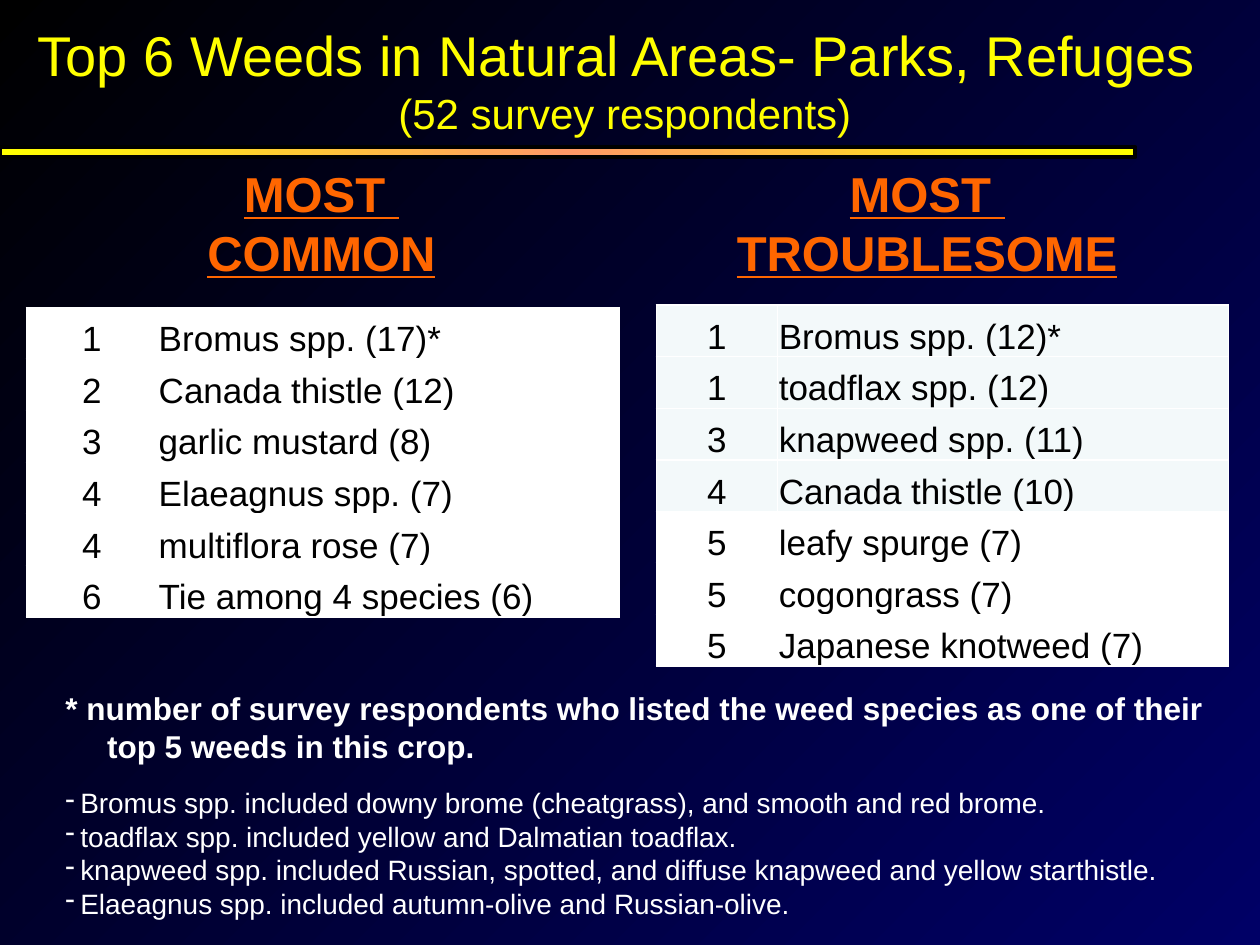
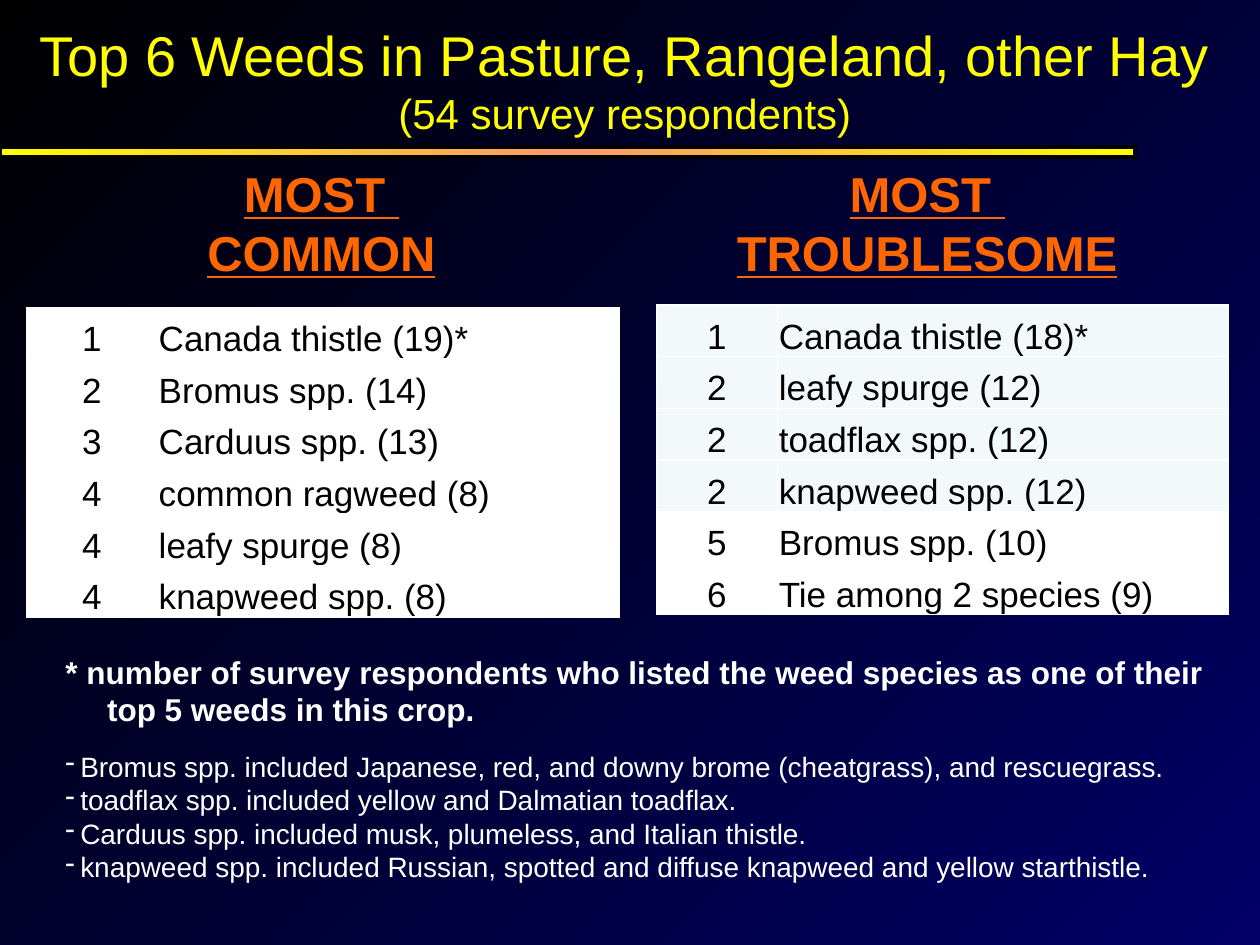
from copy import deepcopy

from lxml.etree import SubElement
from pptx import Presentation
from pptx.dml.color import RGBColor
from pptx.enum.shapes import MSO_SHAPE
from pptx.enum.text import MSO_ANCHOR, MSO_AUTO_SIZE, PP_ALIGN
from pptx.oxml.ns import qn
from pptx.util import Cm, Pt

# Content
FOOTNOTE = ("* number of survey respondents who listed the weed species "
            "as one of their top 5 weeds in this crop.")
SLIDES = [
    {
        "title": ["Top 6 Weeds in Natural Areas- Parks, Refuges ",
                  "(52 survey respondents)"],
        "common": [(1, "Bromus spp. (17)*"), (2, "Canada thistle (12)"),
                   (3, "garlic mustard (8)"), (4, "Elaeagnus spp. (7)"),
                   (4, "multiflora rose (7)"), (6, "Tie among 4 species (6)")],
        "troublesome": [(1, "Bromus spp. (12)*"), (1, "toadflax spp. (12)"),
                        (3, "knapweed spp. (11)"), (4, "Canada thistle (10)"),
                        (5, "leafy spurge (7)"), (5, "cogongrass (7)"),
                        (5, "Japanese knotweed (7)")],
        "notes": [
            "Bromus spp. included downy brome (cheatgrass), and smooth and red brome.",
            "toadflax spp. included yellow and Dalmatian toadflax.",
            "knapweed spp. included Russian, spotted, and diffuse knapweed and yellow starthistle.",
            "Elaeagnus spp. included autumn-olive and Russian-olive."],
        "notes_top": 13.77,
    },
    {
        "title": ["Top 6 Weeds in Pasture, Rangeland, other Hay ",
                  "(54 survey respondents)"],
        "common": [(1, "Canada thistle (19)*"), (2, "Bromus spp. (14)"),
                   (3, "Carduus spp. (13)"), (4, "common ragweed (8)"),
                   (4, "leafy spurge (8)"), (4, "knapweed spp. (8)")],
        "troublesome": [(1, "Canada thistle (18)*"), (2, "leafy spurge (12)"),
                        (2, "toadflax spp. (12)"), (2, "knapweed spp. (12)"),
                        (5, "Bromus spp. (10)"), (6, "Tie among 2 species (9)")],
        "notes": [
            "Bromus spp. included Japanese, red, and downy brome (cheatgrass), and rescuegrass.",
            "toadflax spp. included yellow and Dalmatian toadflax.",
            "Carduus spp. included musk, plumeless, and Italian thistle.",
            "knapweed spp. included Russian, spotted and diffuse knapweed and yellow starthistle."],
        "notes_top": 13.03,
    },
]

# Shared look; lengths in cm
FONT = "Arial"
COLORS = {"black": "000000", "navy": "000066", "yellow": "FFFF00",
          "peach": "FF9966", "orange": "FF6600", "white": "FFFFFF",
          "tint": "F3F9FA"}
ROW_H = 1.04
RANKINGS = {
    "common": {"heading": "MOST \nCOMMON", "heading_at": (3.43, 3.18, 6.1, 2.41),
               "table_at": (0.53, 6.2), "cols": (2.64, 9.32), "tinted": 0},
    "troublesome": {"heading": "MOST \nTROUBLESOME", "heading_at": (14.55, 3.18, 8.28, 2.41),
                    "table_at": (13.23, 6.15), "cols": (2.44, 9.09), "tinted": 4},
}


def rgb(name):
    return RGBColor.from_string(COLORS[name])


def cm(*lengths):
    return [Cm(n) for n in lengths]


def style(p, size, color, bold=False, underline=False, align=PP_ALIGN.LEFT):
    p.alignment = align
    for r in p.runs:
        f = r.font
        f.name, f.size, f.bold, f.underline = FONT, Pt(size), bold, underline
        f.color.rgb = rgb(color)


def set_gradient(fill, names, angle):
    """Spread the named colours evenly; the angle runs counter-clockwise."""
    fill.gradient()
    fill.gradient_angle = angle
    gs_lst = fill.gradient_stops[0]._gs.getparent()
    while len(gs_lst) < len(names):
        gs_lst.append(deepcopy(gs_lst[0]))
    for i, (stop, name) in enumerate(zip(fill.gradient_stops, names)):
        stop.position = i / (len(names) - 1)
        stop.color.rgb = rgb(name)


def set_indent(p, indent, bullet=None):
    pPr = p._p.get_or_add_pPr()
    pPr.set("marL", str(Cm(indent)))
    pPr.set("indent", str(-Cm(indent)))
    if bullet:
        SubElement(pPr, qn("a:buChar")).set("char", bullet)


def set_borders(cell, name):
    tcPr = cell._tc.get_or_add_tcPr()
    for i, side in enumerate(("lnL", "lnR", "lnT", "lnB")):
        ln = tcPr.makeelement(qn(f"a:{side}"), {"w": str(Pt(1))})
        SubElement(SubElement(ln, qn("a:solidFill")), qn("a:srgbClr")).set("val", COLORS[name])
        tcPr.insert(i, ln)


def add_title(s, lines):
    title = s.shapes.title
    title.left, title.top, title.width, title.height = cm(0.43, 0, 24.33, 3.18)
    tf = title.text_frame
    tf.text = "\n".join(lines)
    tf.auto_size = MSO_AUTO_SIZE.NONE
    tf.vertical_anchor = MSO_ANCHOR.MIDDLE
    for p, size in zip(tf.paragraphs, (32, 24)):
        style(p, size, "yellow", align=PP_ALIGN.CENTER)


def add_title_rule(s):
    rule = s.shapes.add_shape(MSO_SHAPE.RECTANGLE, *cm(0, 2.97, 22.89, 0.2))
    rule.shadow.inherit = False
    set_gradient(rule.fill, ("yellow", "peach", "yellow"), 0)
    rule.line.color.rgb = rgb("black")
    rule.line.width = Pt(2.25)


def add_heading(s, text, at):
    tf = s.shapes.add_textbox(*cm(*at)).text_frame
    tf.word_wrap = False
    tf.text = text
    for p in tf.paragraphs:
        style(p, 28, "orange", bold=True, underline=True, align=PP_ALIGN.CENTER)


def add_ranking(s, weeds, at, cols, tinted):
    size = (sum(cols), ROW_H * len(weeds))
    table = s.shapes.add_table(len(weeds), len(cols), *cm(*at, *size)).table
    table.first_row = table.horz_banding = False
    for col, width in zip(table.columns, cols):
        col.width = Cm(width)
    for i, weed in enumerate(weeds):
        table.rows[i].height = Cm(ROW_H)
        for j, value in enumerate(weed):
            cell = table.cell(i, j)
            cell.text_frame.text = str(value)
            cell.vertical_anchor = MSO_ANCHOR.BOTTOM
            cell.margin_left = cell.margin_right = cell.margin_top = Cm(0.03)
            cell.margin_bottom = 0
            cell.fill.solid()
            cell.fill.fore_color.rgb = rgb("tint" if i < tinted else "white")
            set_borders(cell, "white")
            style(cell.text_frame.paragraphs[0], 20, "black",
                  align=PP_ALIGN.LEFT if j else PP_ALIGN.CENTER)


def add_notes(s, notes, top):
    tf = s.shapes.add_textbox(*cm(1.07, top, 23.5, 4.95)).text_frame
    tf.word_wrap = True
    tf.text = "\n".join([FOOTNOTE, *notes])
    footnote, *items = tf.paragraphs
    style(footnote, 18, "white", bold=True)
    set_indent(footnote, 0.84)
    items[0].space_before = Pt(12)
    for p in items:
        style(p, 16, "white")
        set_indent(p, 0.3, bullet="-")


def main():
    prs = Presentation()
    prs.slide_width, prs.slide_height = cm(25.4, 19.05)
    set_gradient(prs.slide_master.background.fill, ("black", "navy"), 315)
    for data in SLIDES:
        s = prs.slides.add_slide(prs.slide_layouts[5])
        add_title(s, data["title"])
        add_title_rule(s)
        for key, look in RANKINGS.items():
            add_heading(s, look["heading"], look["heading_at"])
            add_ranking(s, data[key], look["table_at"], look["cols"], look["tinted"])
        add_notes(s, data["notes"], data["notes_top"])
    prs.save("out.pptx")


if __name__ == "__main__":
    main()
